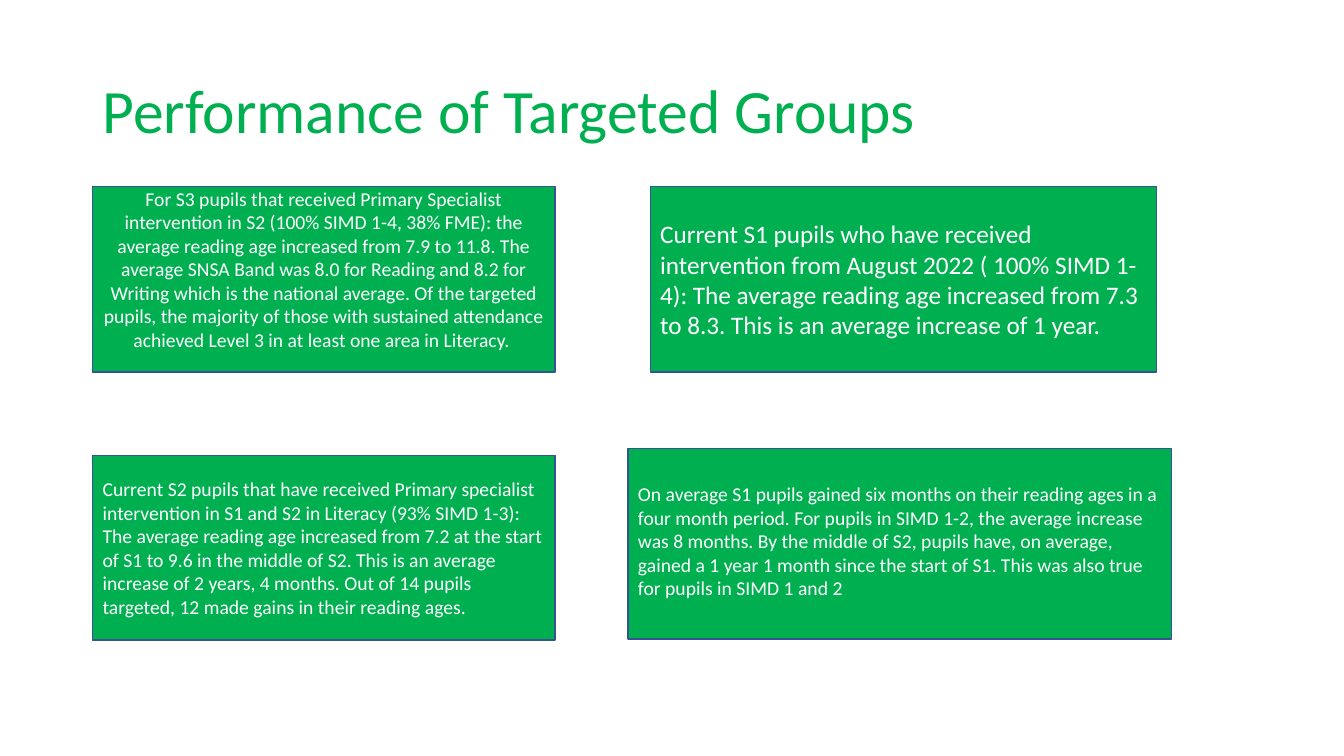
from pptx import Presentation
from pptx.dml.color import RGBColor
from pptx.enum.shapes import MSO_SHAPE
from pptx.enum.text import MSO_ANCHOR, PP_ALIGN
from pptx.util import Inches, Pt

GREEN = RGBColor(0x00, 0xB0, 0x50)
BORDER = RGBColor(0x32, 0x54, 0x91)
WHITE = RGBColor(0xFF, 0xFF, 0xFF)

LEFT = 6.9
TOP = 24.67
LEFT_WIDTH = 34.4

S3_SPECIALIST = (
    "For S3 pupils that received Primary Specialist intervention in S2 "
    "(100% SIMD 1-4, 38% FME): the average reading age increased from 7.9 to 11.8. "
    "The average SNSA Band was 8.0 for Reading and 8.2 for Writing which is the "
    "national average. Of the targeted pupils, the majority of those with sustained "
    "attendance achieved Level 3 in at least one area in Literacy. "
)
S2_SPECIALIST = (
    "Current S2 pupils that have received Primary specialist intervention in S1 and S2 "
    "in Literacy (93% SIMD 1-3): The average reading age increased from 7.2 at the start "
    "of S1 to 9.6 in the middle of S2. This is an average increase of 2 years, 4 months. "
    "Out of 14 pupils targeted, 12 made gains in their reading ages."
)
S1_INTERVENTION = (
    "Current S1 pupils who have received intervention from August 2022 "
    "( 100% SIMD 1-4): The average reading age increased from 7.3 to 8.3. "
    "This is an average increase of 1 year."
)
S1_GAINS = (
    "On average S1 pupils gained six months on their reading ages in a four month period. "
    "For pupils in SIMD 1-2, the average increase was 8 months. By the middle of S2, "
    "pupils have, on average, gained a 1 year 1 month since the start of S1. "
    "This was also true for pupils in SIMD 1 and 2"
)


class SlideBuilder:
    """Draws on one slide; every area is left, top, width, height in percent."""

    def __init__(self, prs, font="Calibri"):
        self.prs = prs
        self.font = font
        self.s = prs.slides.add_slide(prs.slide_layouts[6])

    def place(self, area):
        sizes = (self.prs.slide_width, self.prs.slide_height) * 2
        return [round(size * share / 100) for size, share in zip(sizes, area)]

    def set_text(self, sp, text, size, color, align=PP_ALIGN.LEFT, anchor=MSO_ANCHOR.MIDDLE):
        tf = sp.text_frame
        tf.word_wrap = True
        tf.vertical_anchor = anchor
        tf.text = text
        p = tf.paragraphs[0]
        p.alignment = align
        r = p.runs[0]
        r.font.name = self.font
        r.font.size = Pt(size)
        r.font.color.rgb = color
        return tf

    def title(self, text, area):
        sp = self.s.shapes.add_textbox(*self.place(area))
        tf = self.set_text(sp, text, 44, GREEN)
        tf.paragraphs[0].line_spacing = 0.9

    def box(self, text, area, size=14, **layout):
        sp = self.s.shapes.add_shape(MSO_SHAPE.FLOWCHART_PROCESS, *self.place(area))
        sp.shadow.inherit = False
        sp.fill.solid()
        sp.fill.fore_color.rgb = GREEN
        sp.line.color.rgb = BORDER
        sp.line.width = Pt(1)
        return self.set_text(sp, text, size, WHITE, **layout)


def main():
    prs = Presentation()
    prs.slide_width = Inches(13.33)
    prs.slide_height = Inches(7.5)
    slide = SlideBuilder(prs)

    slide.title("Performance of Targeted Groups", (LEFT, 5.33, 86.25, 19.33))
    tf = slide.box(S3_SPECIALIST, (LEFT, TOP, LEFT_WIDTH, 24.53),
                   align=PP_ALIGN.CENTER, anchor=MSO_ANCHOR.TOP)
    tf.margin_top = 0
    slide.box(S2_SPECIALIST, (LEFT, 60.27, LEFT_WIDTH, 24.4))
    slide.box(S1_INTERVENTION, (48.38, TOP, 37.65, 24.53), size=18)
    tf = slide.box(S1_GAINS, (46.73, 59.33, 40.43, 25.2))
    tf.margin_bottom = Inches(0.11)

    prs.save("out.pptx")


if __name__ == "__main__":
    main()
